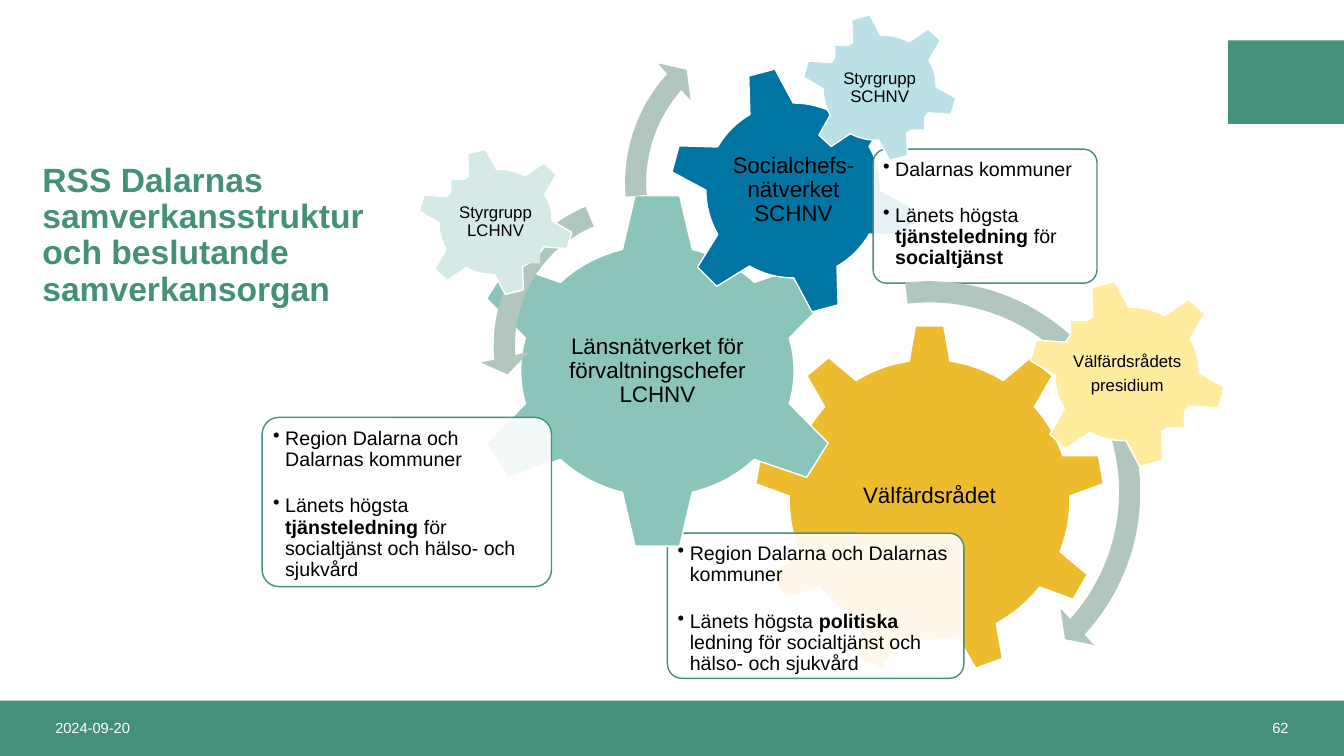
"""Build the slide on the collaboration structure of RSS Dalarna."""
from pptx import Presentation
from pptx.dml.color import RGBColor
from pptx.enum.shapes import MSO_SHAPE
from pptx.enum.text import MSO_ANCHOR, MSO_AUTO_SIZE, PP_ALIGN
from pptx.oxml.ns import qn
from pptx.util import Inches, Pt
from lxml import etree

RECT, ROUND = MSO_SHAPE.RECTANGLE, MSO_SHAPE.ROUNDED_RECTANGLE
GEAR6, GEAR9 = MSO_SHAPE.GEAR_6, MSO_SHAPE.GEAR_9
ARROW, LEFT_ARROW = MSO_SHAPE.CIRCULAR_ARROW, MSO_SHAPE.LEFT_CIRCULAR_ARROW
TOP, MIDDLE = MSO_ANCHOR.TOP, MSO_ANCHOR.MIDDLE
LEFT, CENTER, RIGHT = PP_ALIGN.LEFT, PP_ALIGN.CENTER, PP_ALIGN.RIGHT

THEME = {
    "font": "Arial", "green": "45907A", "white": "FFFFFF", "black": "000000",
    "gold": "EDBC2E", "mint": "8BC5BA", "blue": "0074A2", "arrow": "B1C6BE",
    "pale_blue": "BBE0E8", "pale_gold": "FFEC9F", "pale_mint": "D5EAE6",
    "title": 24, "gear": 16, "note": 14, "small": 12, "footer": 10.5,
}

prs = Presentation()
prs.slide_width, prs.slide_height = Inches(13.33), Inches(7.5)
s = prs.slides.add_slide(prs.slide_layouts[5])
COLS, ROWS = 133.3, 75
CELL = prs.slide_height / ROWS


def cells(*lengths):
    return [round(n * CELL) for n in lengths]


def write(sp, paragraphs, size="gear", color="black", bold=False, align=LEFT,
          anchor=MIDDLE, insets=(1, 0.5), spacing=0.9, after=0, bullet=False):
    tf = sp.text_frame
    tf.word_wrap, tf.auto_size, tf.vertical_anchor = True, MSO_AUTO_SIZE.NONE, anchor
    tf.margin_left, tf.margin_top = tf.margin_right, tf.margin_bottom = cells(*insets)
    for i, text in enumerate(paragraphs):
        p = tf.add_paragraph() if i else tf.paragraphs[0]
        p.alignment, p.line_spacing = align, spacing
        p.space_before, p.space_after = Pt(0), Pt(after)
        if bullet:
            pPr = p._p.get_or_add_pPr()
            pPr.set("marL", str(Inches(0.12)))
            pPr.set("indent", str(-Inches(0.12)))
            etree.SubElement(pPr, qn("a:buChar")).set("char", "•")
        for j, part in enumerate(text.split("**")):
            if part:
                r = p.add_run()
                r.text = part
                r.font.name, r.font.size = THEME["font"], Pt(THEME[size])
                r.font.bold = bold or j % 2 == 1
                r.font.color.rgb = RGBColor.from_string(THEME[color])


title = s.shapes.title
title.left, title.top, title.width, title.height = cells(3.2, 16.8, 39, 13.2)
write(title, ["RSS Dalarnas samverkansstruktur och beslutande samverkansorgan"],
      size="title", color="green", bold=True)

parts = [
    (RECT, (0, 69.5, COLS, 5.5), "green", {}),
    (RECT, (121.8, 4, COLS - 121.8, 8.3), "green", {}),
    (GEAR9, (74.8, 32.2, 34.8, 34.8), "gold",
     {"text": ["Välfärdsrådet"], "share": (0.6, 0.51), "lift": 0.35}),
    (ROUND, (66.2, 52.9, 29.4, 14.4), "white",
     {"text": ["Region Dalarna och Dalarnas kommuner",
               "Länets högsta **politiska** ledning för socialtjänst och hälso- och sjukvård"]}),
    (GEAR6, (46.3, 19, 37.8, 35.6), "mint",
     {"text": ["Länsnätverket för förvaltningschefer LCHNV"], "share": (0.51, 0.49)}),
    (ROUND, (26, 41.4, 28.7, 16.8), "white",
     {"text": ["Region Dalarna och Dalarnas kommuner",
               "Länets högsta **tjänsteledning** för socialtjänst och hälso- och sjukvård"]}),
    (GEAR6, (66.3, 6.5, 24.8, 24.8), "blue",
     {"text": ["Socialchefs-nätverket SCHNV"], "turn": 345}),
    (ROUND, (86.6, 14.8, 22.2, 13.3), "white",
     {"text": ["Dalarnas kommuner",
               "Länets högsta **tjänsteledning** för **socialtjänst**"]}),
    (ARROW, (69.9, 26.5, 44.6, 44.6), "arrow",
     {"adj": (0.047, 2.99, 25.446, 158.014, 0.055)}),
    (LEFT_ARROW, (47.6, 18, 32.4, 32.4), "arrow",
     {"adj": (0.065, 4.3, 104.891, 148.378, 0.075)}),
    (ARROW, (60.6, 0.7, 34.9, 34.9), "arrow",
     {"adj": (0.06, 3.941, 133.138, 105.082, 0.07)}),
    (GEAR6, (79.4, 1.3, 15.7, 14.8), "pale_blue",
     {"text": ["Styrgrupp SCHNV"], "turn": 345, "size": "small"}),
    (GEAR6, (101.8, 27.7, 20, 18.8), "pale_gold",
     {"text": ["Välfärdsrådets", "presidium"], "turn": 345, "size": "small"}),
    (GEAR6, (41.3, 14.6, 15.7, 14.8), "pale_mint",
     {"text": ["Styrgrupp LCHNV"], "turn": 345, "size": "small"}),
]

for kind, (x, y, w, h), color, opts in parts:
    sp = s.shapes.add_shape(kind, *cells(x, y, w, h))
    sp.shadow.inherit = False
    sp.rotation = opts.get("turn", 0)
    sp.fill.solid()
    sp.fill.fore_color.rgb = RGBColor.from_string(THEME[color])
    for i, value in enumerate(opts.get("adj", ())):
        sp.adjustments[i] = value
    if "text" not in opts:
        sp.line.fill.background()
        continue
    sp.line.width = Pt(1)
    sp.line.color.rgb = RGBColor.from_string(THEME["green" if kind == ROUND else "white"])
    if kind == ROUND:
        sp.adjustments[0] = 0.1
        tint = next(sp._element.spPr.iter(qn("a:srgbClr")))
        etree.SubElement(tint, qn("a:alpha")).set("val", "90000")
        write(sp, opts["text"], size="note", anchor=TOP, insets=(0.6, 0.6),
              after=18, bullet=True)
        continue
    size = opts.get("size", "gear")
    share_w, share_h = opts.get("share", (0.56, 0.56))
    label = s.shapes.add_textbox(*cells(
        x + w * (1 - share_w) / 2, y + h * (1 - share_h) / 2 - opts.get("lift", 0),
        w * share_w, h * share_h))
    if size == "small":
        label.fill.solid()
        label.fill.fore_color.rgb = RGBColor.from_string(THEME[color])
    write(label, opts["text"], size=size, align=CENTER, insets=(0.2, 0.2),
          after=0.35 * THEME[size])

for x, text, align in ((4.5, "2024-09-20", LEFT), (98.8, "62", RIGHT)):
    footer = s.shapes.add_textbox(*cells(x, 69.5, 30, 5.4))
    write(footer, [text], size="footer", color="white", align=align, spacing=1)

prs.save("out.pptx")
